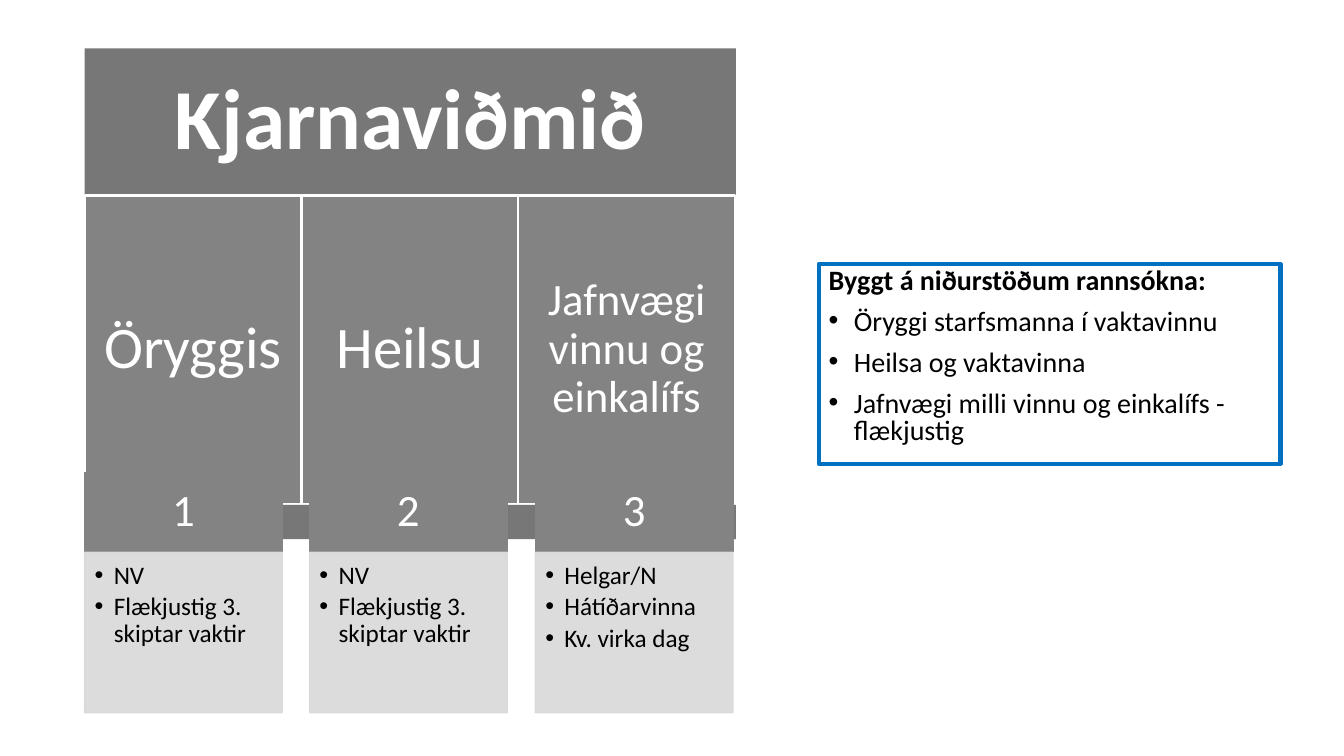
from lxml.etree import SubElement as Sub
from pptx import Presentation as Deck
from pptx.dml.color import RGBColor as RGB
from pptx.enum.shapes import MSO_SHAPE as Kind
from pptx.enum.text import MSO_ANCHOR as Anchor, PP_ALIGN as Align
from pptx.oxml.ns import qn
from pptx.util import Pt

PX = 9144
FONT = "Calibri"
WHITE = RGB(0xFF, 0xFF, 0xFF)
BLACK = RGB(0x00, 0x00, 0x00)
BLUE = RGB(0x00, 0x70, 0xC0)
DARK = RGB(0x77, 0x77, 0x77)
GREY = RGB(0x83, 0x83, 0x83)
PALE = RGB(0xD9, 0xD9, 0xD9)

LEFT, WIDE = 84, 646
PILLARS = [
    ("Öryggis", 42, 17, ["NV", "Flækjustig 3. skiptar vaktir"]),
    ("Heilsu", 42, 17, ["NV", "Flækjustig 3. skiptar vaktir"]),
    ("Jafnvægi vinnu og einkalífs", 32, 13,
     ["Helgar/N", "Hátíðarvinna", "Kv. virka dag"]),
]
TITLE = "Byggt á niðurstöðum rannsókna:"
BASIS = [
    "Öryggi starfsmanna í vaktavinnu",
    "Heilsa og vaktavinna",
    "Jafnvægi milli vinnu og einkalífs - flækjustig",
]


def box(slide, area, fill=None, line=None, width=1):
    shape = slide.shapes.add_shape(Kind.RECTANGLE, *(n * PX for n in area))
    shape.shadow.inherit = False
    if fill is None:
        shape.fill.background()
    else:
        shape.fill.solid()
        shape.fill.fore_color.rgb = fill
    if line is None:
        shape.line.fill.background()
    else:
        shape.line.color.rgb = line
        shape.line.width = Pt(width)
    return shape


def fade(shape, share):
    for tint in shape.element.spPr.iter(qn("a:srgbClr")):
        Sub(tint, qn("a:alpha"), val=str(share * 1000))


def frame(shape, pads, anchor):
    body = shape.text_frame
    body.word_wrap = True
    body.vertical_anchor = anchor
    (body.margin_left, body.margin_top,
     body.margin_right, body.margin_bottom) = (n * PX for n in pads)
    return body


def style(para, text, size, color, bold=False, lead=0.9):
    para.text = text
    para.line_spacing = lead
    font = para.font
    font.name, font.size, font.bold = FONT, Pt(size), bold
    font.color.rgb = color


def bullet(para, indent):
    props = para._p.get_or_add_pPr()
    props.set("marL", str(indent * PX))
    props.set("indent", str(-indent * PX))
    Sub(props, qn("a:buFont"), typeface="Arial")
    Sub(props, qn("a:buChar"), char="•")


def label(shape, text, size, pads, bold=False):
    para = frame(shape, pads, Anchor.MIDDLE).paragraphs[0]
    style(para, text, size, WHITE, bold)
    para.alignment = Align.CENTER


def card(slide, left, number, items):
    head = box(slide, (left, 469, 196, 78), GREY, GREY)
    label(head, str(number), 32, (25, 14, 25, 14))
    panel = box(slide, (left, 548, 196, 159), PALE, PALE)
    fade(panel, 90)
    body = frame(panel, (10, 10, 14, 16), Anchor.TOP)
    for i, item in enumerate(items):
        para = body.add_paragraph() if i else body.paragraphs[0]
        style(para, item, 18, BLACK)
        para.alignment = Align.LEFT
        para.space_after = Pt(3)
        bullet(para, 19)


def basis(slide):
    shape = box(slide, (812, 262, 458, 198), line=BLUE, width=3)
    body = frame(shape, (10, 5, 10, 5), Anchor.TOP)
    for i, text in enumerate([TITLE] + BASIS):
        para = body.add_paragraph() if i else body.paragraphs[0]
        style(para, text, 20, BLACK, bold=not i, lead=0.8)
        para.alignment = Align.LEFT
        para.space_before = Pt(10)
        if i:
            bullet(para, 25)


def main():
    deck = Deck()
    deck.slide_width, deck.slide_height = 1333 * PX, 750 * PX
    slide = deck.slides.add_slide(deck.slide_layouts[6])
    basis(slide)
    label(box(slide, (LEFT, 48, WIDE, 146), DARK),
          "Kjarnaviðmið", 61, (25,) * 4, bold=True)
    for i, (name, size, pad, _) in enumerate(PILLARS):
        pillar = box(slide, (LEFT + i * 215, 194, 215, 306), GREY, WHITE, 1.5)
        label(pillar, name, size, (pad,) * 4)
    box(slide, (LEFT, 501, WIDE, 34), DARK)
    for i, (*_, items) in enumerate(PILLARS):
        card(slide, LEFT + i * 447 // 2, i + 1, items)
    deck.save("out.pptx")


if __name__ == "__main__":
    main()
